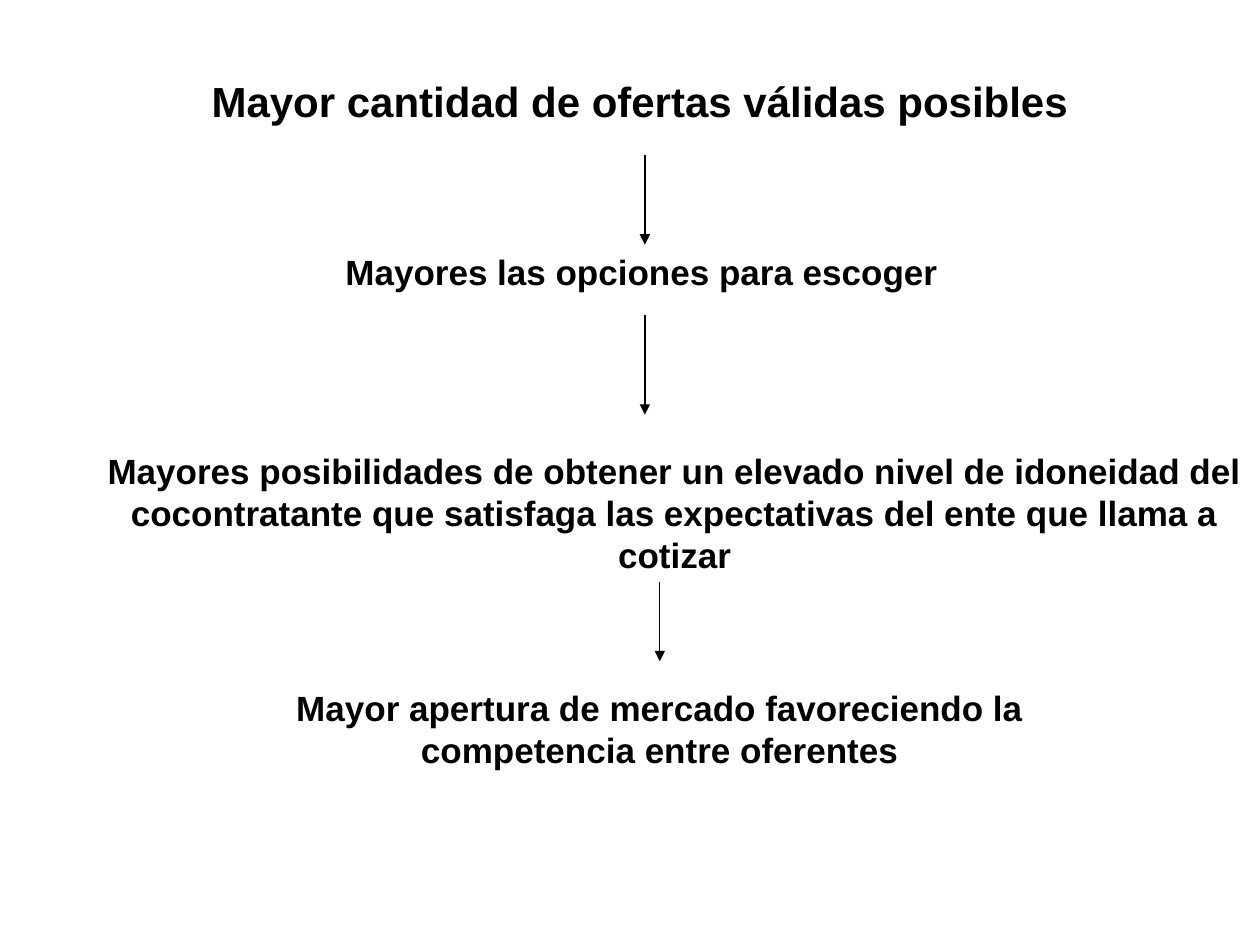
from dataclasses import dataclass

from lxml.etree import SubElement
from pptx import Presentation
from pptx.dml.color import RGBColor
from pptx.enum.shapes import MSO_CONNECTOR as Connector
from pptx.enum.text import MSO_ANCHOR as Anchor, PP_ALIGN as Align
from pptx.oxml.ns import qn
from pptx.util import Cm, Pt

BLACK = "000000"
FONT = "Arial"


@dataclass
class Step:
    text: str
    left: float
    top: float
    width: float
    height: float


@dataclass
class Arrow:
    x: float
    top: float
    bottom: float


TITLE = Step("Mayor cantidad de ofertas válidas posibles", 2.41, 0.36, 23.55, 2.31)
TITLE_INDENT = 1.6

STEPS = [
    Step("Mayores las opciones para escoger", -3.5, 4.93, 32.87, 1.12),
    Step("Mayores posibilidades de obtener un elevado nivel de idoneidad del "
         "cocontratante que satisfaga las expectativas del ente que llama a cotizar",
         1.8, 8.94, 23.6, 2.82),
    Step("Mayor apertura de mercado favoreciendo la competencia entre oferentes",
         3.6, 13.72, 19.4, 1.96),
]

ARROWS = [
    Arrow(13, 3.12, 4.93),
    Arrow(13, 6.35, 8.36),
    Arrow(13.3, 11.73, 13.33),
]


def color(value: str) -> RGBColor:
    return RGBColor.from_string(value)


def write(tf, text: str, size: int, align: Align, anchor: Anchor) -> None:
    tf.word_wrap = True
    tf.vertical_anchor = anchor
    p = tf.paragraphs[0]
    p.alignment = align
    r = p.add_run()
    r.text = text
    r.font.name = FONT
    r.font.size = Pt(size)
    r.font.bold = True
    r.font.color.rgb = color(BLACK)


def add_title(s, step: Step) -> None:
    sp = s.shapes.title
    sp.left, sp.top = Cm(step.left), Cm(step.top)
    sp.width, sp.height = Cm(step.width), Cm(step.height)
    write(sp.text_frame, step.text, 24, Align.LEFT, Anchor.BOTTOM)
    pPr = sp.text_frame.paragraphs[0]._p.get_or_add_pPr()
    pPr.set("marL", str(Cm(TITLE_INDENT)))
    pPr.set("indent", "0")


def add_step(s, step: Step) -> None:
    sp = s.shapes.add_textbox(Cm(step.left), Cm(step.top), Cm(step.width), Cm(step.height))
    write(sp.text_frame, step.text, 20, Align.CENTER, Anchor.TOP)


def add_arrow(s, arrow: Arrow) -> None:
    sp = s.shapes.add_connector(
        Connector.STRAIGHT, Cm(arrow.x), Cm(arrow.top), Cm(arrow.x), Cm(arrow.bottom))
    sp.line.color.rgb = color(BLACK)
    sp.line.width = Pt(0.75)
    SubElement(sp.line._get_or_add_ln(), qn("a:tailEnd"), type="triangle")
    SubElement(sp._element.spPr, qn("a:effectLst"))


def main() -> None:
    prs = Presentation()
    prs.slide_width, prs.slide_height = Cm(25.4), Cm(19.05)
    s = prs.slides.add_slide(prs.slide_layouts[5])
    add_title(s, TITLE)
    for arrow, step in zip(ARROWS, STEPS):
        add_arrow(s, arrow)
        add_step(s, step)
    prs.save("out.pptx")


if __name__ == "__main__":
    main()
